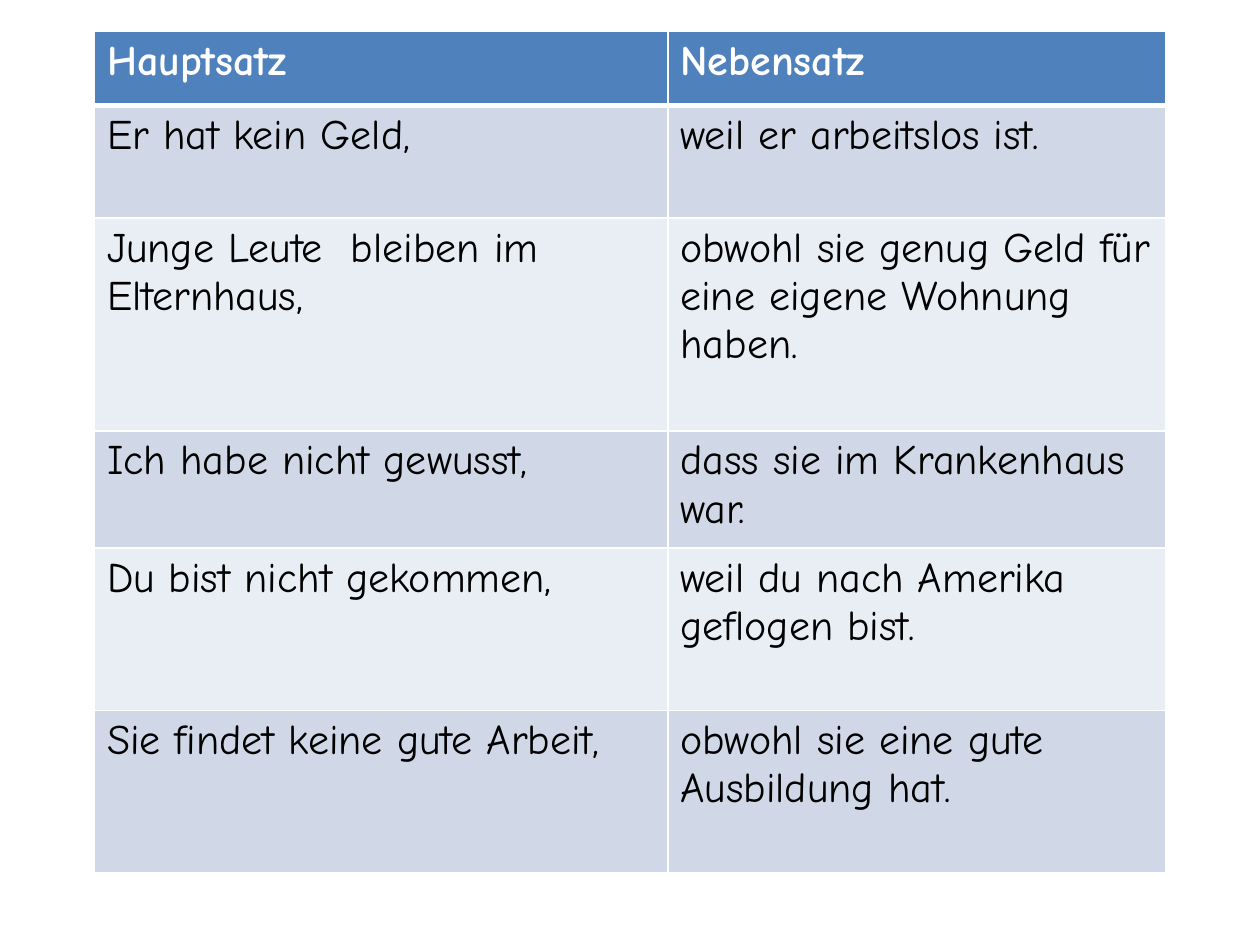
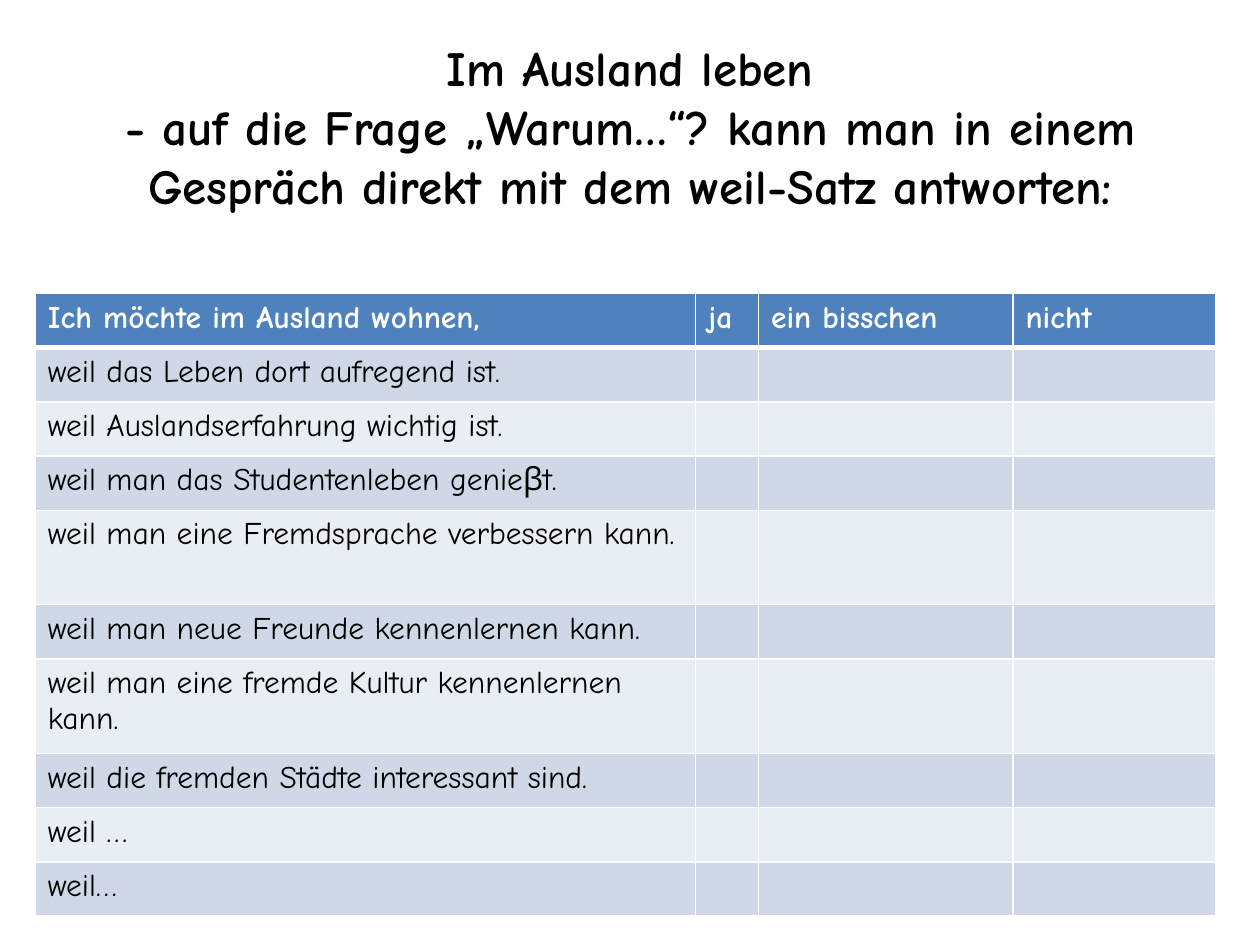
import pptx
import pptx.util
import pptx.dml.color
import pptx.enum.text
import pptx.oxml.ns
from lxml import etree

Inches = pptx.util.Inches
Pt = pptx.util.Pt
RGBColor = pptx.dml.color.RGBColor

WHITE = RGBColor(0xFF, 0xFF, 0xFF)
BLACK = RGBColor(0x00, 0x00, 0x00)
HEADER_BLUE = RGBColor(0x4F, 0x81, 0xBD)
BANDS = (RGBColor(0xD0, 0xD8, 0xE8), RGBColor(0xE9, 0xED, 0xF4))
FONT = "Comic Neue"
TITLE_ONLY, BLANK = 5, 6

CLAUSES = [
    ("Hauptsatz", "Nebensatz"),
    ("Er hat kein Geld,", "weil er arbeitslos ist."),
    ("Junge Leute  bleiben im Elternhaus,",
     "obwohl sie genug Geld für eine eigene Wohnung haben."),
    ("Ich habe nicht gewusst,", "dass sie im Krankenhaus war."),
    ("Du bist nicht gekommen,", "weil du nach Amerika geflogen bist."),
    ("Sie findet keine gute Arbeit,", "obwohl sie eine gute Ausbildung hat."),
]
REASONS = [
    "weil das Leben dort aufregend ist.",
    "weil Auslandserfahrung wichtig ist.",
    "weil man das Studentenleben genieβt.",
    "weil man eine Fremdsprache verbessern kann.",
    "weil man neue Freunde kennenlernen kann.",
    "weil man eine fremde Kultur kennenlernen kann.",
    "weil die fremden Städte interessant sind.",
    "weil …",
    "weil…",
]
SURVEY = [("Ich möchte im Ausland wohnen,", "ja", "ein bisschen", "nicht")]
SURVEY += [(reason, "", "", "") for reason in REASONS]
TITLE_LINES = (
    "Im Ausland leben",
    "- auf die Frage „Warum…“? kann man in einem Gespräch direkt mit dem weil-Satz antworten:",
)


def format_font(font, size, color, bold):
    style = {"name": FONT, "size": Pt(size), "bold": bold}
    for attribute, value in style.items():
        setattr(font, attribute, value)
    font.color.rgb = color


def draw_borders(cell, top, bottom):
    properties = cell._tc.get_or_add_tcPr()
    for side, width in {"lnL": 1, "lnR": 1, "lnT": top, "lnB": bottom}.items():
        line = etree.SubElement(properties, pptx.oxml.ns.qn(f"a:{side}"), w=str(Pt(width)))
        fill = etree.SubElement(line, pptx.oxml.ns.qn("a:solidFill"))
        etree.SubElement(fill, pptx.oxml.ns.qn("a:srgbClr"), val=str(WHITE))


def add_banded_table(slide, box, widths, heights, content, size):
    table = slide.shapes.add_table(
        len(heights), len(widths), *(Inches(length) for length in box)).table
    for column, width in zip(table.columns, widths):
        column.width = Inches(width)
    for index, (row, height, texts) in enumerate(zip(table.rows, heights, content)):
        row.height = Inches(height)
        header = index == 0
        for cell, text in zip(row.cells, texts):
            draw_borders(cell, 3 if index == 1 else 1, 3 if header else 1)
            cell.fill.solid()
            cell.fill.fore_color.rgb = HEADER_BLUE if header else BANDS[(index - 1) % 2]
            cell.text = text
            format_font(cell.text_frame.paragraphs[0].font, size,
                        WHITE if header else BLACK, header)
            for run in cell.text_frame.paragraphs[0].runs:
                format_font(run.font, size, WHITE if header else BLACK, header)


def place_title(slide, box, lines):
    title = slide.shapes.title
    for side, length in zip(("left", "top", "width", "height"), box):
        setattr(title, side, Inches(length))
    frame = title.text_frame
    settings = {
        "word_wrap": True,
        "auto_size": pptx.enum.text.MSO_AUTO_SIZE.NONE,
        "vertical_anchor": pptx.enum.text.MSO_ANCHOR.MIDDLE,
        "margin_bottom": Inches(0.5),
    }
    for attribute, value in settings.items():
        setattr(frame, attribute, value)
    paragraph = frame.paragraphs[0]
    paragraph.alignment = pptx.enum.text.PP_ALIGN.CENTER
    for index, line in enumerate(lines):
        if index:
            paragraph.add_line_break()
        run = paragraph.add_run()
        run.text = line
        format_font(run.font, 28, BLACK, True)


def build_clause_slide(deck):
    slide = deck.slides.add_slide(deck.slide_layouts[BLANK])
    add_banded_table(slide, (0.75, 0.25, 8.5, 6.69), (4.55, 3.95),
                     (0.59, 0.89, 1.69, 0.93, 1.29, 1.29), CLAUSES, 24)


def build_survey_slide(deck):
    slide = deck.slides.add_slide(deck.slide_layouts[TITLE_ONLY])
    place_title(slide, (0.5, 0.36, 9, 1.73), TITLE_LINES)
    tall_rows = (4, 6)
    heights = [0.75 if row in tall_rows else 0.43 for row in range(len(SURVEY))]
    add_banded_table(slide, (0.28, 2.33, 9.37, 4.96), (5.24, 0.5, 2.02, 1.61),
                     heights, SURVEY, 18)


def main():
    deck = pptx.Presentation()
    deck.slide_width = Inches(10)
    deck.slide_height = Inches(7.5)
    build_clause_slide(deck)
    build_survey_slide(deck)
    deck.save("out.pptx")


if __name__ == "__main__":
    main()
